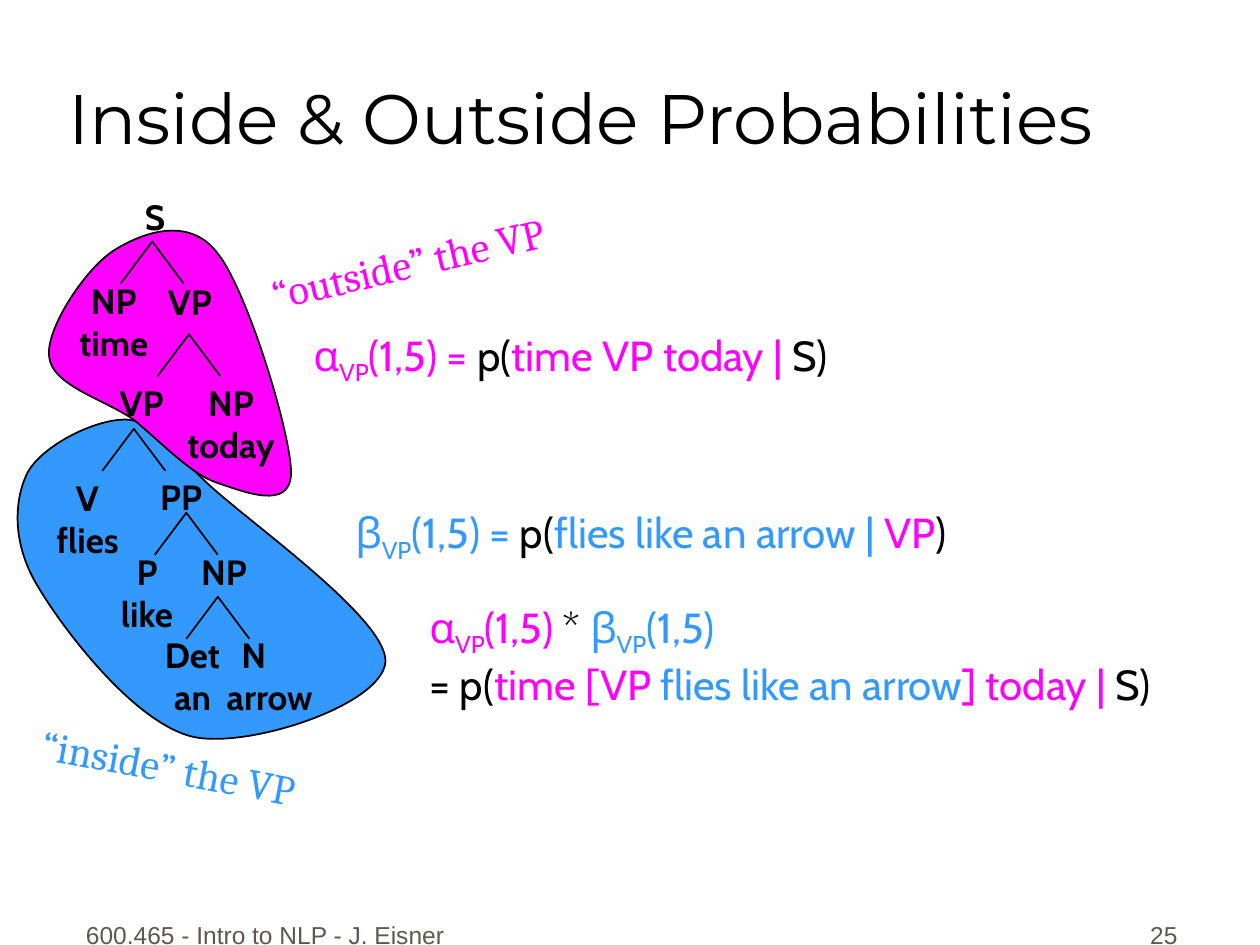
from pptx import Presentation
from pptx.dml.color import RGBColor
from pptx.enum.text import MSO_ANCHOR, MSO_AUTO_SIZE, PP_ALIGN
from pptx.oxml.ns import qn
from pptx.util import Pt
from lxml import etree

LEFT, MID, RIGHT = PP_ALIGN.LEFT, PP_ALIGN.CENTER, PP_ALIGN.RIGHT
TOP, BASE = MSO_ANCHOR.TOP, MSO_ANCHOR.BOTTOM
FIXED = MSO_AUTO_SIZE.NONE
HUES = {"ink": "000000", "out": "FF00FF", "in": "3399FF", "foot": "5E574E"}


def color(name):
    return RGBColor.from_string(HUES[name])


def write(frame, lines, size=20, font="Cabin", hue="ink", bold=False,
          align=MID, anchor=TOP):
    """Each line is a string or a list of (text, hue, is subscript) runs."""
    frame.auto_size = FIXED
    frame.word_wrap = align != MID
    frame.vertical_anchor = anchor
    for i, line in enumerate(lines):
        para = frame.paragraphs[0] if i == 0 else frame.add_paragraph()
        para.alignment = align
        runs = [(line, hue, False)] if isinstance(line, str) else line
        for text, tint, sub in runs:
            if text == "\n":
                para.add_line_break()
                continue
            run = para.add_run()
            run.text = text
            run.font.size, run.font.name = Pt(size), font
            run.font.bold = bold
            run.font.color.rgb = color(tint)
            if sub:
                run._r.get_or_add_rPr().set("baseline", "-25000")


class Board:
    def __init__(self, slide):
        self.slide = slide
        self.shapes = slide.shapes

    def title(self, text, x, y, w, h):
        box = self.shapes.title
        box.left, box.top, box.width, box.height = Pt(x), Pt(y), Pt(w), Pt(h)
        write(box.text_frame, [text], size=40, font="Montserrat",
              align=LEFT, anchor=BASE)

    def text(self, lines, x, y, w, h, turn=0, **style):
        box = self.shapes.add_textbox(Pt(x), Pt(y), Pt(w), Pt(h))
        box.rotation = turn
        write(box.text_frame, lines, **style)
        return box

    def node(self, lines, x, y, w, **style):
        high = 7.2 + 24.2 * len(lines)
        return self.text(lines, x, y, w, high, bold=True, **style)

    def outline(self, points, close, fill=None):
        spots = [(Pt(x), Pt(y)) for x, y in points]
        pen = self.shapes.build_freeform(*spots[0])
        pen.add_line_segments(spots[1:], close=close)
        shape = pen.convert_to_shape()
        shape.shadow.inherit = False
        shape.line.color.rgb = color("ink")
        shape.line.width = Pt(1)
        if fill:
            shape.fill.solid()
            shape.fill.fore_color.rgb = color(fill)
        else:
            shape.fill.background()
        return shape

    def region(self, points, fill):
        """Closed Bezier outline: a start, then three points per curve."""
        shape = self.outline(points, True, fill)
        steps = list(shape._element.iter(qn("a:lnTo")))
        for i in range(0, len(points) - 1, 3):
            curve = etree.Element(qn("a:cubicBezTo"))
            steps[i].addprevious(curve)
            for step in steps[i:i + 3]:
                curve.append(step[0])
                step.getparent().remove(step)

    def fork(self, x, y):
        self.outline([(x - 18, y + 24), (x, y), (x + 18, y + 24)], False)


def term(sign, hue, tail):
    return [(sign, hue, False), ("VP", hue, True), (tail, hue, False)]


def main():
    deck = Presentation()
    deck.slide_width, deck.slide_height = Pt(720), Pt(540)
    board = Board(deck.slides.add_slide(deck.slide_layouts[5]))
    board.title("Inside & Outside Probabilities", 31.7, 4.3, 670, 90)

    # Inside and outside regions
    board.region([(72.7, 239.8),
                  (55.4, 239), (24.5, 254.2), (15.8, 270),
                  (7.9, 285.8), (6.5, 311), (22.3, 336.2),
                  (37.4, 361.4), (77.8, 414), (110.9, 421.2),
                  (143.3, 427.7), (218.9, 402.5), (220.3, 378),
                  (221, 353.5), (142.6, 298.8), (118.1, 275.8),
                  (93.6, 252.7), (89.3, 241.2), (72.7, 239.8)], "in")
    board.region([(123.8, 275.8),
                  (139, 280.8), (166.3, 292.3), (166.3, 270),
                  (166.3, 247.7), (141.1, 164.9), (123.8, 144),
                  (107.3, 123.1), (80.6, 133.2), (64.8, 143.3),
                  (49, 153.4), (25.9, 187.9), (28.1, 203.8),
                  (29.5, 220.3), (59.8, 228.2), (76.3, 239.8),
                  (91.4, 252), (108.7, 270.7), (123.8, 275.8)], "out")

    # Parse tree
    for x, y in [(87, 138), (108, 191), (76.5, 245), (106.5, 293),
                 (124.5, 341)]:
        board.fork(x, y)
    for lines, x, y, w in [
            (["S"], 75, 108, 27), (["NP", "time"], 35, 156, 60),
            (["VP"], 88, 157, 41), (["VP"], 60.5, 214.5, 41),
            (["NP", "today"], 96.5, 214.5, 71),
            (["V", "flies"], 22, 268.5, 56), (["PP"], 83, 268, 41),
            (["P", "like"], 59, 311, 50), (["NP"], 106.5, 311, 43),
            (["Det", "an"], 85, 358.5, 50)]:
        board.node(lines, x, y, w)
    leaf = board.node(["N", "arrow"], 122.4, 358.5, 76, align=LEFT)
    first = leaf.text_frame.paragraphs[0]._p.get_or_add_pPr()
    first.set("marL", str(Pt(8.5)))

    # Formulas
    form = {"size": 24, "align": LEFT}
    board.text([term("α", "out", "(1,5) = ") + [
        ("p(", "ink", False), ("time VP today | ", "out", False),
        ("S)", "ink", False)]], 172, 184.5, 349, 36, **form)
    board.text([term("β", "in", "(1,5) = ") + [
        ("p(", "ink", False), ("flies like an arrow | ", "in", False),
        ("VP", "out", False), (")", "ink", False)]],
        196, 286, 401, 36, **form)
    board.text([term("α", "out", "(1,5) ") + [("* ", "ink", False)]
                + term("β", "in", "(1,5) ") + [
        ("\n", "ink", False), ("= p(", "ink", False),
        ("time [VP ", "out", False), ("flies like an arrow", "in", False),
        ("] today | ", "out", False), ("S)", "ink", False)]],
        238.3, 340, 477, 65, **form)

    # Tilted captions
    tilt = {"size": 24, "font": "Cambria"}
    board.text(["“inside” the VP"], 6, 420, 181, 36, 10.7, hue="in", **tilt)
    board.text(["“outside” the VP"], 136, 132, 194, 36, 346.8, hue="out",
               **tilt)

    # Footer
    foot = {"size": 14, "font": "Arial", "hue": "foot", "anchor": BASE}
    board.text(["600.465 - Intro to NLP - J. Eisner"], 42, 510, 228, 36,
               align=LEFT, **foot)
    board.text(["25"], 530, 510, 150, 36, align=RIGHT, **foot)
    deck.save("out.pptx")


if __name__ == "__main__":
    main()
